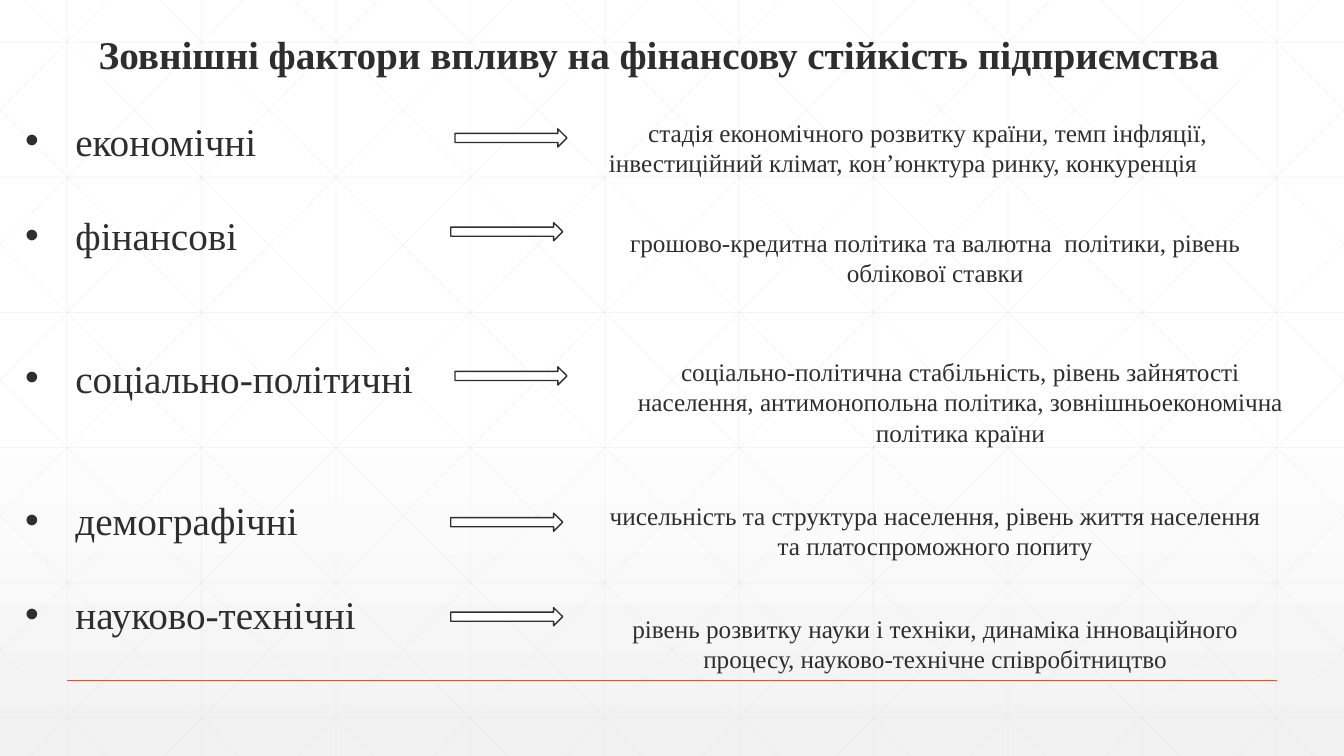
from lxml.etree import SubElement
from pptx import Presentation
from pptx.dml.color import RGBColor
from pptx.enum.shapes import MSO_CONNECTOR as CONNECTOR, MSO_SHAPE as SHAPE
from pptx.enum.text import PP_ALIGN as ALIGN
from pptx.oxml.ns import qn
from pptx.util import Pt

INK = RGBColor(0x2D, 0x2E, 0x2D)
WHITE = RGBColor(0xFF, 0xFF, 0xFF)
PALE_GREY = RGBColor(0xF2, 0xF2, 0xF2)
GRID_GREY = RGBColor(0xD9, 0xD9, 0xD9)
ACCENT = RGBColor(0xD1, 0x5A, 0x3E)
FONT = "Times New Roman"
WIDTH, HEIGHT = 960, 540

# Factor, space before it, arrow (left, top), description (left, top, height), first-line indent
FACTORS = [
    ("економічні", 0, (325, 92), (405, 80, 51), 35.3,
     "стадія економічного розвитку країни, темп інфляції, інвестиційний клімат, "
     "кон’юнктура ринку, конкуренція"),
    ("фінансові", 34, (322, 159), (428, 159, 51), 0,
     "грошово-кредитна політика та валютна  політики, рівень облікової ставки"),
    ("соціально-політичні", 68, (325, 262), (446, 251, 73), 0,
     "соціально-політична стабільність, рівень зайнятості населення, "
     "антимонопольна політика, зовнішньоекономічна політика країни"),
    ("демографічні", 68, (322, 366.5), (428, 354, 51), 0,
     "чисельність та структура населення, рівень життя населення та "
     "платоспроможного попиту"),
    ("науково-технічні", 34, (322, 434), (428, 434.5, 51), 0,
     "рівень розвитку науки і техніки, динаміка інноваційного процесу, "
     "науково-технічне співробітництво"),
]


def add_line(slide, start, end, color, width, opacity=None):
    line = slide.shapes.add_connector(CONNECTOR.STRAIGHT, *map(Pt, start + end))
    line.line.color.rgb = color
    line.line.width = Pt(width)
    properties = line.element.spPr
    SubElement(properties, qn("a:effectLst"))
    if opacity:
        rgb = properties.find(".//" + qn("a:srgbClr"))
        SubElement(rgb, qn("a:alpha")).set("val", str(opacity * 1000))


def add_text_box(slide, box, wrap=True):
    frame = slide.shapes.add_textbox(*map(Pt, box)).text_frame
    frame.word_wrap = wrap
    return frame


def write(paragraph, text, size, bold=False, align=ALIGN.LEFT, before=0,
          margin=0, indent=0, bullet=None):
    settings = paragraph._p.get_or_add_pPr()
    settings.set("marL", str(Pt(margin)))
    settings.set("indent", str(Pt(indent)))
    if bullet:
        SubElement(settings, qn("a:buFont")).set("typeface", "Arial")
        SubElement(settings, qn("a:buChar")).set("char", bullet)
    paragraph.alignment = align
    paragraph.space_before = Pt(before)
    run = paragraph.add_run()
    run.text = text
    run.font.name, run.font.size, run.font.bold = FONT, Pt(size), bold
    run.font.color.rgb = INK


def draw_background(slide, box):
    left, top, width, height = box
    fill = slide.background.fill
    fill.gradient()
    fill.gradient_angle = 270
    for stop, position, color in zip(fill.gradient_stops, (0.53, 1), (WHITE, PALE_GREY)):
        stop.position = position
        stop.color.rgb = color

    # Upright and level grid lines
    pitch = 96
    lines = [((x, 0), (x, height)) for x in range(48, width, pitch)]
    lines += [((0, 30.2 + 96.5 * row), (width, 30.2 + 96.5 * row)) for row in range(6)]

    # Diagonals, cut at the edges, each with its mirror image
    run = 537
    for x in range(18 - 5 * pitch, width, pitch):
        first, last = max(0, -x / run), min(1, (width - x) / run)
        (x1, y1), (x2, y2) = [(x + run * part, height * part) for part in (first, last)]
        lines += [((x1, y1), (x2, y2)), ((width - x1, y1), (width - x2, y2))]

    for (x1, y1), (x2, y2) in lines:
        add_line(slide, (left + x1, top + y1), (left + x2, top + y2), GRID_GREY, 0.5, 25)

    # Footer rule
    add_line(slide, (left + 48, top + 486), (left + width - 48, top + 486), ACCENT, 1)


def draw_title(slide, box):
    title = add_text_box(slide, box, wrap=False)
    write(title.paragraphs[0],
          "Зовнішні фактори впливу на фінансову стійкість підприємства", 28, bold=True)


def draw_factor_list(slide, box):
    factors = add_text_box(slide, box)
    for index, (factor, before, *_) in enumerate(FACTORS):
        paragraph = factors.add_paragraph() if index else factors.paragraphs[0]
        write(paragraph, factor, 28, before=before, margin=36, indent=-36, bullet="•")


def draw_descriptions(slide, box):
    left, top = box[:2]
    for _, _, _, (x, y, height), indent, text in FACTORS:
        description = add_text_box(slide, (left + x, top + y, 480, height))
        write(description.paragraphs[0], text, 18, align=ALIGN.CENTER, indent=indent)


def draw_arrows(slide, box):
    left, top = box[:2]
    for _, _, (x, y), *_ in FACTORS:
        arrow = slide.shapes.add_shape(
            SHAPE.RIGHT_ARROW, *map(Pt, (left + x, top + y, 80, 13)))
        arrow.shadow.inherit = False
        arrow.fill.solid()
        arrow.fill.fore_color.rgb = WHITE
        arrow.line.color.rgb = INK
        arrow.line.width = Pt(1)


def main():
    deck = Presentation()
    deck.slide_width, deck.slide_height = Pt(WIDTH), Pt(HEIGHT)
    slide = deck.slides.add_slide(deck.slide_layouts[6])
    page = (0, 0, WIDTH, HEIGHT)
    draw_background(slide, page)
    draw_title(slide, (63.4, 18, 823, 41))
    draw_factor_list(slide, (10.8, 80, 299, 380))
    draw_descriptions(slide, page)
    draw_arrows(slide, page)
    deck.save("out.pptx")


if __name__ == "__main__":
    main()
